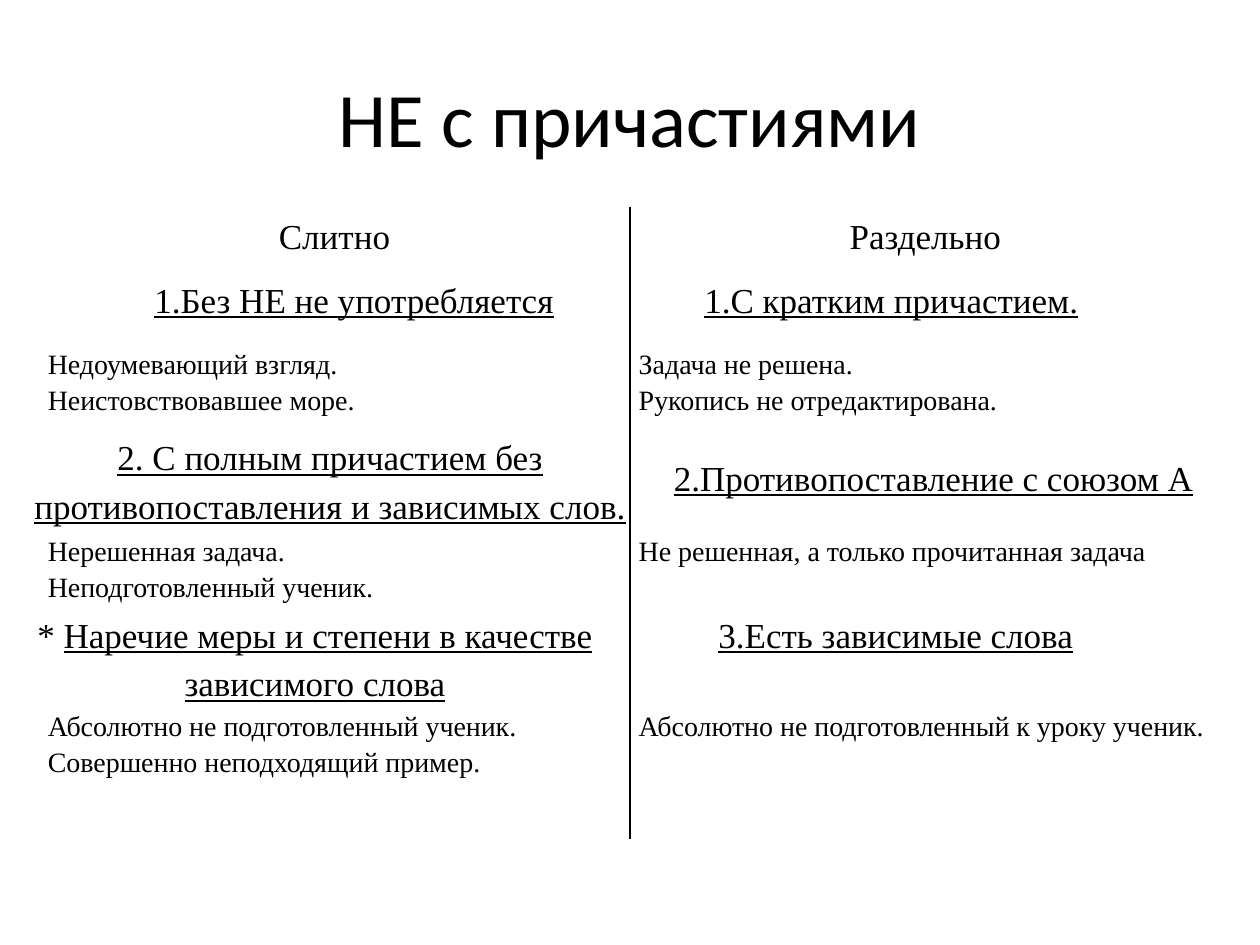
"""Build a slide comparing joined and separate spelling of НЕ with participles."""
from lxml.etree import fromstring
from pptx import Presentation
from pptx.dml.color import RGBColor
from pptx.enum.text import MSO_ANCHOR as Anchor, MSO_AUTO_SIZE as AutoSize, PP_ALIGN as Align
from pptx.util import Inches, Pt

BLACK = RGBColor(0, 0, 0)
SERIF = "Times New Roman"
NAMESPACE = "http://schemas.openxmlformats.org/drawingml/2006/main"
NO_STYLE_NO_GRID = "{2D5ABB26-0587-4C30-8999-92F81FD0307C}"
TABLE_LEFT, TABLE_TOP, COLUMN_WIDTH = 0.31, 1.64, 4.69
ROW_HEIGHTS = [0.45, 0.65, 0.76, 0.72, 0.71, 0.68, 1.05]
EXAMPLES = {
    2: (["Недоумевающий взгляд.", "Неистовствовавшее море."],
        ["Задача не решена.", "Рукопись не отредактирована."]),
    4: (["Нерешенная задача.", "Неподготовленный ученик."],
        ["Не решенная, а только прочитанная задача"]),
    6: (["Абсолютно не подготовленный ученик.", "Совершенно неподходящий пример."],
        ["Абсолютно не подготовленный к уроку ученик."]),
}
RULES = [
    (0.7, 2.11, 4.22, 0.46, True, "", "1.Без НЕ не употребляется"),
    (5.16, 2.11, 3.83, 0.46, True, "", "1.С кратким причастием."),
    (5.23, 3.52, 4.36, 0.46, False, "", "2.Противопоставление с союзом А"),
    (5.39, 4.77, 3.44, 0.49, True, "", "3.Есть зависимые слова"),
    (0.16, 3.36, 4.92, 0.88, True, "",
     "2. С полным причастием без противопоставления и зависимых слов."),
    (0, 4.77, 5, 0.84, True, "* ", "Наречие меры и степени в качестве зависимого слова"),
]


def add_run(paragraph, text, size, font_name=SERIF, underline=None):
    run = paragraph.add_run()
    run.text = text
    run.font.name = font_name
    run.font.size = Pt(size)
    run.font.color.rgb = BLACK
    run.font.underline = underline


def fill_cell(cell, lines, size, alignment):
    for index, line in enumerate(lines):
        frame = cell.text_frame
        paragraph = frame.add_paragraph() if index else frame.paragraphs[0]
        paragraph.alignment = alignment
        paragraph.line_spacing = 1.15
        add_run(paragraph, line, size)


presentation = Presentation()
presentation.slide_width, presentation.slide_height = Inches(10), Inches(7.5)
slide = presentation.slides.add_slide(presentation.slide_layouts[5])

title = slide.shapes.title
title.left, title.top = Inches(0.5), Inches(0.3)
title.width, title.height = Inches(9), Inches(1.25)
title.text_frame.vertical_anchor = Anchor.MIDDLE
title_paragraph = title.text_frame.paragraphs[0]
title_paragraph.alignment = Align.CENTER
add_run(title_paragraph, "НЕ с причастиями", 44, "Calibri")

table = slide.shapes.add_table(
    len(ROW_HEIGHTS), 2, Inches(TABLE_LEFT), Inches(TABLE_TOP),
    Inches(2 * COLUMN_WIDTH), Inches(sum(ROW_HEIGHTS))).table
table.first_row = table.horz_banding = False
table._tbl.tblPr.find(f"{{{NAMESPACE}}}tableStyleId").text = NO_STYLE_NO_GRID
for column in table.columns:
    column.width = Inches(COLUMN_WIDTH)
for row, height in zip(table.rows, ROW_HEIGHTS):
    row.height = Inches(height)
    for cell, side in zip(row.cells, ("lnR", "lnL")):
        cell.fill.background()
        cell.margin_left = cell.margin_right = Inches(0.07)
        cell.margin_top = cell.margin_bottom = 0
        border = fromstring(
            f'<a:{side} xmlns:a="{NAMESPACE}" w="{Pt(1)}"><a:solidFill>'
            f'<a:srgbClr val="{BLACK}"/></a:solidFill></a:{side}>')
        cell._tc.get_or_add_tcPr().insert(0, border)

for column, heading in enumerate(("Слитно", "Раздельно")):
    table.cell(0, column).vertical_anchor = Anchor.MIDDLE
    fill_cell(table.cell(0, column), [heading], 20, Align.CENTER)
    for row, examples in EXAMPLES.items():
        fill_cell(table.cell(row, column), examples[column], 16, Align.JUSTIFY)

for left, top, width, height, wraps, marker, rule in RULES:
    box = slide.shapes.add_textbox(Inches(left), Inches(top), Inches(width), Inches(height))
    box.text_frame.word_wrap = wraps
    box.text_frame.auto_size = AutoSize.SHAPE_TO_FIT_TEXT
    paragraph = box.text_frame.paragraphs[0]
    paragraph.alignment = Align.CENTER
    paragraph.line_spacing = 1.15
    if marker:
        add_run(paragraph, marker, 20)
    add_run(paragraph, rule, 20, underline=True)

presentation.save("out.pptx")
